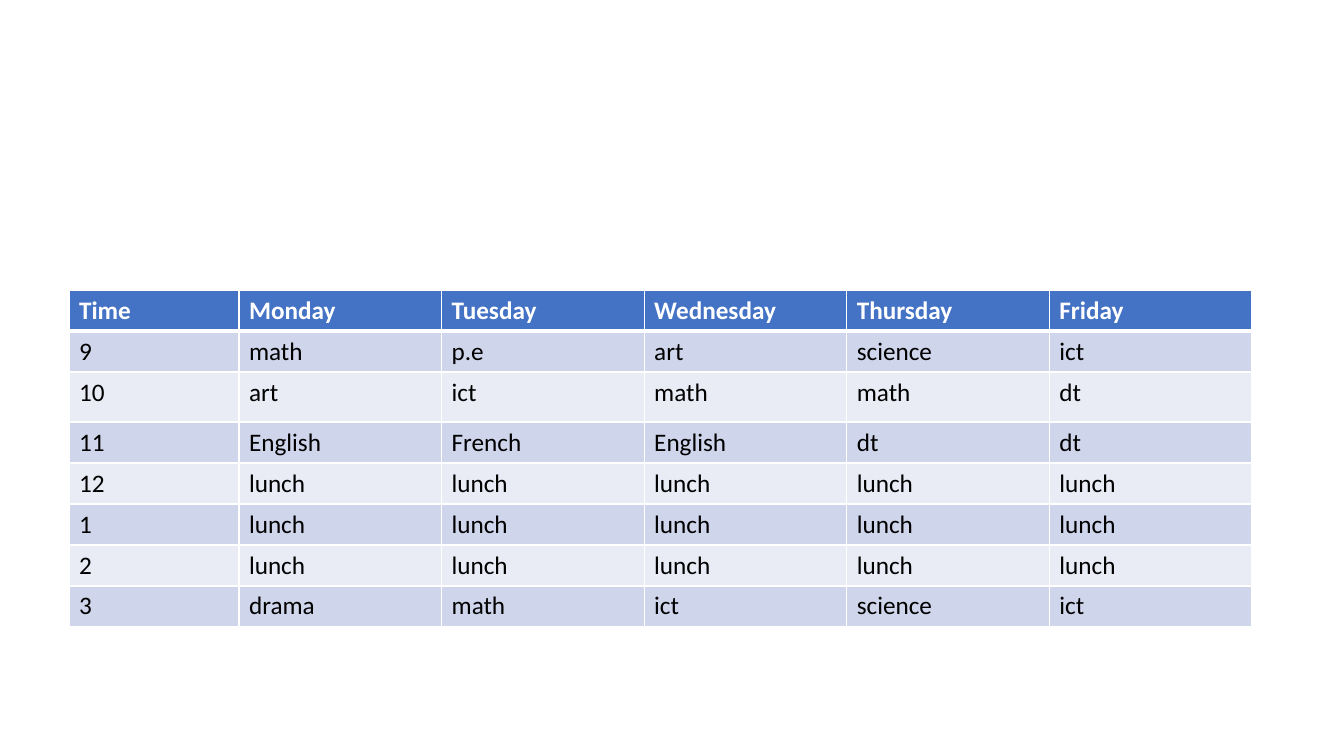
from lxml import etree
from pptx import Presentation
from pptx.dml.color import RGBColor
from pptx.oxml.ns import qn
from pptx.util import Emu, Pt

EMU_PER_PX = 914400 / 100.8
WHITE = RGBColor(0xFF, 0xFF, 0xFF)
BLACK = RGBColor(0x00, 0x00, 0x00)
HEADER_BLUE = RGBColor(0x44, 0x72, 0xC4)
BAND_DARK = RGBColor(0xCF, 0xD5, 0xEA)
BAND_LIGHT = RGBColor(0xE9, 0xEB, 0xF5)

TIMETABLE = [
    ("Time", "Monday", "Tuesday", "Wednesday", "Thursday", "Friday"),
    ("9", "math", "p.e", "art", "science", "ict"),
    ("10", "art", "ict", "math", "math", "dt"),
    ("11", "English", "French", "English", "dt", "dt"),
    ("12",) + ("lunch",) * 5,
    ("1",) + ("lunch",) * 5,
    ("2",) + ("lunch",) * 5,
    ("3", "drama", "math", "ict", "science", "ict"),
]
TIME_WIDTH = 170
ROW_HEIGHT = 41
TALL_ROW, TALL_HEIGHT = 2, 50


def px(length):
    return Emu(round(length * EMU_PER_PX))


def set_borders(cell, top, bottom):
    """Draw white cell edges; the sides are always 1 pt."""
    properties = cell._tc.get_or_add_tcPr()
    edges = (("a:lnL", 1), ("a:lnR", 1), ("a:lnT", top), ("a:lnB", bottom))
    for position, (tag, points) in enumerate(edges):
        edge = etree.Element(qn(tag), w=str(Pt(points)))
        fill = etree.SubElement(edge, qn("a:solidFill"))
        etree.SubElement(fill, qn("a:srgbClr"), val=str(WHITE))
        properties.insert(position, edge)


def fill_cell(cell, wording, row):
    is_header = row == 0
    cell.fill.solid()
    if is_header:
        cell.fill.fore_color.rgb = HEADER_BLUE
    else:
        cell.fill.fore_color.rgb = BAND_DARK if row % 2 else BAND_LIGHT
    set_borders(cell, top=3 if row == 1 else 1, bottom=3 if is_header else 1)

    run = cell.text_frame.paragraphs[0].add_run()
    run.text = wording
    run.font.name = "Calibri"
    run.font.size = Pt(18)
    run.font.bold = is_header
    run.font.color.rgb = WHITE if is_header else BLACK


def add_timetable(slide, left, top, width):
    heights = [ROW_HEIGHT] * len(TIMETABLE)
    heights[TALL_ROW] = TALL_HEIGHT
    days = len(TIMETABLE[0]) - 1
    timetable = slide.shapes.add_table(
        len(TIMETABLE), days + 1, px(left), px(top), px(width), px(sum(heights))
    ).table

    # Narrow time column, then equal day columns
    timetable.columns[0].width = px(TIME_WIDTH)
    for day in range(1, days + 1):
        timetable.columns[day].width = px((width - TIME_WIDTH) / days)

    # Lessons, hour by hour
    for row, (height, lessons) in enumerate(zip(heights, TIMETABLE)):
        timetable.rows[row].height = px(height)
        for column, wording in enumerate(lessons):
            fill_cell(timetable.cell(row, column), wording, row)


def main():
    presentation = Presentation()
    presentation.slide_width = px(1344)
    presentation.slide_height = px(756)
    slide = presentation.slides.add_slide(presentation.slide_layouts[6])
    add_timetable(slide, left=69, top=290, width=1183)
    presentation.save("out.pptx")


if __name__ == "__main__":
    main()
